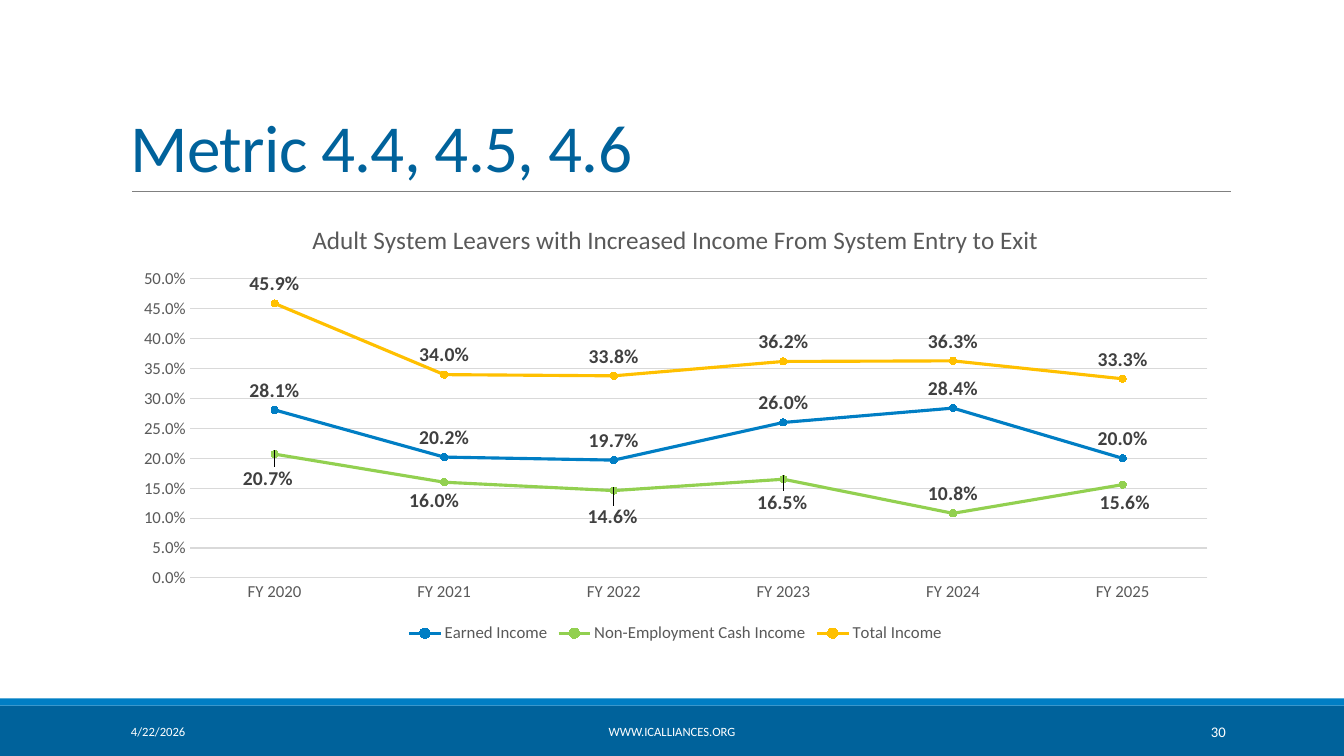
from lxml import etree
from pptx import Presentation
from pptx.chart.data import CategoryChartData
from pptx.dml.color import RGBColor
from pptx.enum.chart import (XL_CHART_TYPE, XL_LABEL_POSITION, XL_LEGEND_POSITION,
                             XL_MARKER_STYLE, XL_TICK_MARK)
from pptx.enum.shapes import MSO_CONNECTOR, MSO_SHAPE
from pptx.enum.text import MSO_ANCHOR, PP_ALIGN
from pptx.oxml import parse_xml
from pptx.oxml.ns import nsdecls, qn
from pptx.util import Cm, Pt

COLORS = {
    "navy": "00629B", "blue": "007EC4", "green": "92D050", "yellow": "FFC000",
    "purple": "7030A0", "rule": "808080", "grid": "D9D9D9", "axis": "595959",
    "label": "404040", "white": "FFFFFF",
}


def color(name):
    return RGBColor.from_string(COLORS[name])


def add_text(text, left, top, width, height, size=9, ink="white", align=PP_ALIGN.LEFT,
             anchor=MSO_ANCHOR.MIDDLE, line_spacing=1.0, tracking=0):
    box = page.shapes.add_textbox(Cm(left), Cm(top), Cm(width), Cm(height))
    frame = box.text_frame
    frame.word_wrap = True
    frame.vertical_anchor = anchor
    para = frame.paragraphs[0]
    para.alignment = align
    para.line_spacing = line_spacing
    span = para.add_run()
    span.text = text
    span.font.name = "Calibri"
    span.font.size = Pt(size)
    span.font.color.rgb = color(ink)
    if tracking:
        span.font._element.set("spc", str(tracking))


deck = Presentation()
deck.slide_width, deck.slide_height = Cm(33.87), Cm(19.05)
page = deck.slides.add_slide(deck.slide_layouts[6])

# Footer bands
for top, height, fill in [(17.78, 1.27, "navy"), (17.6, 0.18, "blue")]:
    band = page.shapes.add_shape(MSO_SHAPE.RECTANGLE, 0, Cm(top), deck.slide_width, Cm(height))
    band.shadow.inherit = False
    band.fill.solid()
    band.fill.fore_color.rgb = color(fill)
    band.line.fill.background()

# Title and its rule
rule = page.shapes.add_connector(MSO_CONNECTOR.STRAIGHT, Cm(3.33), Cm(4.83), Cm(31.01), Cm(4.83))
rule.line.color.rgb = color("rule")
rule.line.width = Pt(0.5)
etree.SubElement(rule._element.spPr, qn("a:effectLst"))
add_text("Metric 4.4, 4.5, 4.6", 3.05, 0.79, 27.94, 4.04, size=48, ink="navy",
         anchor=MSO_ANCHOR.BOTTOM, line_spacing=0.85, tracking=-50)

# Chart data: name, values, line colour, marker colour
series_rows = [
    ("Earned Income", [0.281, 0.202, 0.197, 0.26, 0.284, 0.2], "blue", "navy"),
    ("Non-Employment Cash Income", [0.207, 0.16, 0.146, 0.165, 0.108, 0.156], "green", "green"),
    ("Total Income", [0.459, 0.34, 0.338, 0.362, 0.363, 0.333], "yellow", "purple"),
]
data = CategoryChartData(number_format="0.0%")
data.categories = [f"FY {year}" for year in range(2020, 2026)]
for name, values, _, _ in series_rows:
    data.add_series(name, values)
chart = page.shapes.add_chart(XL_CHART_TYPE.LINE_MARKERS, Cm(3.05), Cm(5.13),
                              Cm(27.94), Cm(11.18), data).chart
chart.font.name = "Calibri"
chart.font.size = Pt(12)
chart.font.color.rgb = color("axis")

# Chart title, legend and plot area
chart.has_title = True
chart.chart_title.include_in_layout = False
chart_title = chart.chart_title.text_frame
chart_title.text = "Adult System Leavers with Increased Income From System Entry to Exit"
title_font = chart_title.paragraphs[0].runs[0].font
title_font.name, title_font.size, title_font.bold = "Calibri", Pt(18), False
title_font.color.rgb = color("axis")
chart.has_legend = True
chart.legend.position = XL_LEGEND_POSITION.BOTTOM
chart.legend.include_in_layout = False
plot_area = chart._chartSpace.chart.plotArea
for old_layout in plot_area.findall(qn("c:layout")):
    plot_area.remove(old_layout)
plot_area.insert(0, parse_xml(
    f'<c:layout {nsdecls("c")}><c:manualLayout><c:layoutTarget val="inner"/>'
    '<c:xMode val="edge"/><c:yMode val="edge"/><c:x val="0.062"/><c:y val="0.17"/>'
    '<c:w val="0.918"/><c:h val="0.674"/></c:manualLayout></c:layout>'))

# Axes
for axis in (chart.category_axis, chart.value_axis):
    axis.major_tick_mark = axis.minor_tick_mark = XL_TICK_MARK.NONE
chart.category_axis.format.line.color.rgb = color("grid")
chart.category_axis.format.line.width = Pt(0.75)
value_axis = chart.value_axis
value_axis.minimum_scale, value_axis.maximum_scale, value_axis.major_unit = 0, 0.5, 0.05
value_axis.tick_labels.number_format = "0.0%"
value_axis.tick_labels.number_format_is_linked = False
value_axis.format.line.fill.background()
value_axis.major_gridlines.format.line.color.rgb = color("grid")
value_axis.major_gridlines.format.line.width = Pt(0.75)

# Series lines, markers and labels
for series, (_, _, line, marker) in zip(chart.plots[0].series, series_rows):
    series.smooth = False
    series.format.line.color.rgb = color(line)
    series.format.line.width = Pt(2.25)
    series.marker.style = XL_MARKER_STYLE.CIRCLE
    series.marker.size = 5
    series.marker.format.fill.solid()
    series.marker.format.fill.fore_color.rgb = color(marker)
    series.marker.format.line.color.rgb = color(line)
    labels = series.data_labels
    labels.show_value = True
    labels.position = XL_LABEL_POSITION.ABOVE
    labels.number_format = "0.0%"
    labels.number_format_is_linked = False
    label_fonts = [labels.font]
    if line == "green":
        # Labels moved under the line, as shares of the chart size
        shifts = {0: (-0.006, 0.099), 1: (-0.009, 0.086), 2: (-0.001, 0.104),
                  3: (-0.001, 0.097), 5: (0.002, 0.084)}
        for index, (across, down) in shifts.items():
            label = series.points[index].data_label
            label.position = XL_LABEL_POSITION.ABOVE
            label_fonts.append(label.font)
            label._dLbl.insert(1, parse_xml(
                f'<c:layout {nsdecls("c")}><c:manualLayout><c:x val="{across}"/>'
                f'<c:y val="{down}"/></c:manualLayout></c:layout>'))
    for font in label_fonts:
        font.name, font.size, font.bold = "Calibri", Pt(14), True
        font.color.rgb = color("label")

# Footer text
add_text("4/22/2026", 3.05, 17.93, 6.86, 1.02)
add_text("WWW.ICALLIANCES.ORG", 10.24, 17.93, 13.39, 1.02, align=PP_ALIGN.CENTER)
add_text("30", 27.51, 17.93, 3.63, 1.02, size=10.5, align=PP_ALIGN.RIGHT)

deck.save("out.pptx")
